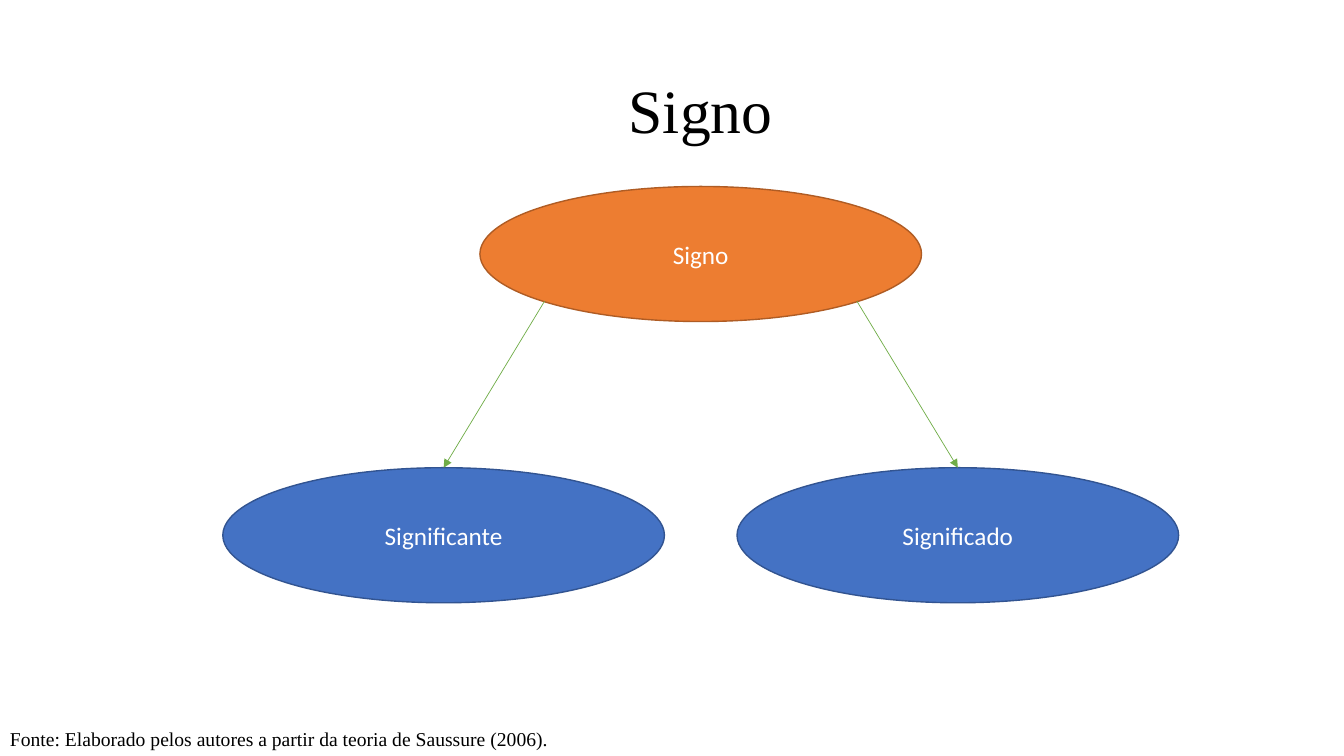
from dataclasses import dataclass

from lxml.etree import SubElement
from pptx import Presentation
from pptx.dml.color import RGBColor
from pptx.enum.shapes import MSO_CONNECTOR, MSO_SHAPE
from pptx.enum.text import MSO_ANCHOR, MSO_AUTO_SIZE, PP_ALIGN
from pptx.oxml.ns import qn
from pptx.slide import Slide
from pptx.text.text import TextFrame
from pptx.util import Inches, Pt

BLACK = RGBColor(0x00, 0x00, 0x00)
WHITE = RGBColor(0xFF, 0xFF, 0xFF)
BLUE = RGBColor(0x44, 0x72, 0xC4)
DARK_BLUE = RGBColor(0x32, 0x54, 0x91)
ORANGE = RGBColor(0xED, 0x7D, 0x31)
DARK_ORANGE = RGBColor(0xAF, 0x5C, 0x24)
GREEN = RGBColor(0x70, 0xAD, 0x47)

SERIF = "Times New Roman"
SANS = "Calibri"
CENTER_X = 6.95
NODE_W, NODE_H = 4.38, 1.34
TOP_Y, BOTTOM_Y = 1.85, 4.64
BRANCH_DX = 2.55
ARROW_DX, ARROW_Y = 1.55, 2.99


@dataclass(frozen=True)
class Node:
    label: str
    dx: float
    top: float
    fill: RGBColor
    line: RGBColor


NODES = [
    Node("Significado", BRANCH_DX, BOTTOM_Y, BLUE, DARK_BLUE),
    Node("Significante", -BRANCH_DX, BOTTOM_Y, BLUE, DARK_BLUE),
    Node("Signo", 0, TOP_Y, ORANGE, DARK_ORANGE),
]


def write(tf: TextFrame, text: str, size: float, font: str, color: RGBColor,
          align: PP_ALIGN, anchor: MSO_ANCHOR) -> None:
    tf.word_wrap = True
    tf.vertical_anchor = anchor
    p = tf.paragraphs[0]
    p.alignment = align
    r = p.add_run()
    r.text = text
    r.font.size = Pt(size)
    r.font.name = font
    r.font.color.rgb = color


def add_title(slide: Slide, text: str) -> None:
    title = slide.shapes.title
    title.left, title.top = Inches(2.21), Inches(0.4)
    title.width, title.height = Inches(9.48), Inches(1.45)
    write(title.text_frame, text, 44, SERIF, BLACK, PP_ALIGN.CENTER, MSO_ANCHOR.MIDDLE)
    title.text_frame.paragraphs[0].line_spacing = 0.9


def add_node(slide: Slide, node: Node) -> None:
    sp = slide.shapes.add_shape(
        MSO_SHAPE.OVAL, Inches(CENTER_X + node.dx - NODE_W / 2), Inches(node.top),
        Inches(NODE_W), Inches(NODE_H))
    sp.shadow.inherit = False
    sp.fill.solid()
    sp.fill.fore_color.rgb = node.fill
    sp.line.color.rgb = node.line
    sp.line.width = Pt(1)
    write(sp.text_frame, node.label, 18, SANS, WHITE, PP_ALIGN.CENTER, MSO_ANCHOR.MIDDLE)


def add_arrow(slide: Slide, side: int) -> None:
    arrow = slide.shapes.add_connector(
        MSO_CONNECTOR.STRAIGHT,
        Inches(CENTER_X + side * ARROW_DX), Inches(ARROW_Y),
        Inches(CENTER_X + side * BRANCH_DX), Inches(BOTTOM_Y))
    arrow.line.color.rgb = GREEN
    arrow.line.width = Pt(0.5)
    SubElement(arrow.line._get_or_add_ln(), qn("a:tailEnd"), type="triangle")
    SubElement(arrow._element.spPr, qn("a:effectLst"))


def add_source(slide: Slide, text: str) -> None:
    box = slide.shapes.add_textbox(Inches(0), Inches(7.16), Inches(7.47), Inches(0.34))
    write(box.text_frame, text, 14, SERIF, BLACK, PP_ALIGN.LEFT, MSO_ANCHOR.TOP)
    box.text_frame.auto_size = MSO_AUTO_SIZE.SHAPE_TO_FIT_TEXT


def main() -> None:
    prs = Presentation()
    prs.slide_width, prs.slide_height = Inches(13.33), Inches(7.5)
    slide = prs.slides.add_slide(prs.slide_layouts[5])
    add_title(slide, "Signo")
    for node in NODES:
        add_node(slide, node)
    for side in (-1, 1):
        add_arrow(slide, side)
    add_source(slide, "Fonte: Elaborado pelos autores a partir da teoria de Saussure (2006).")
    prs.save("out.pptx")


if __name__ == "__main__":
    main()
